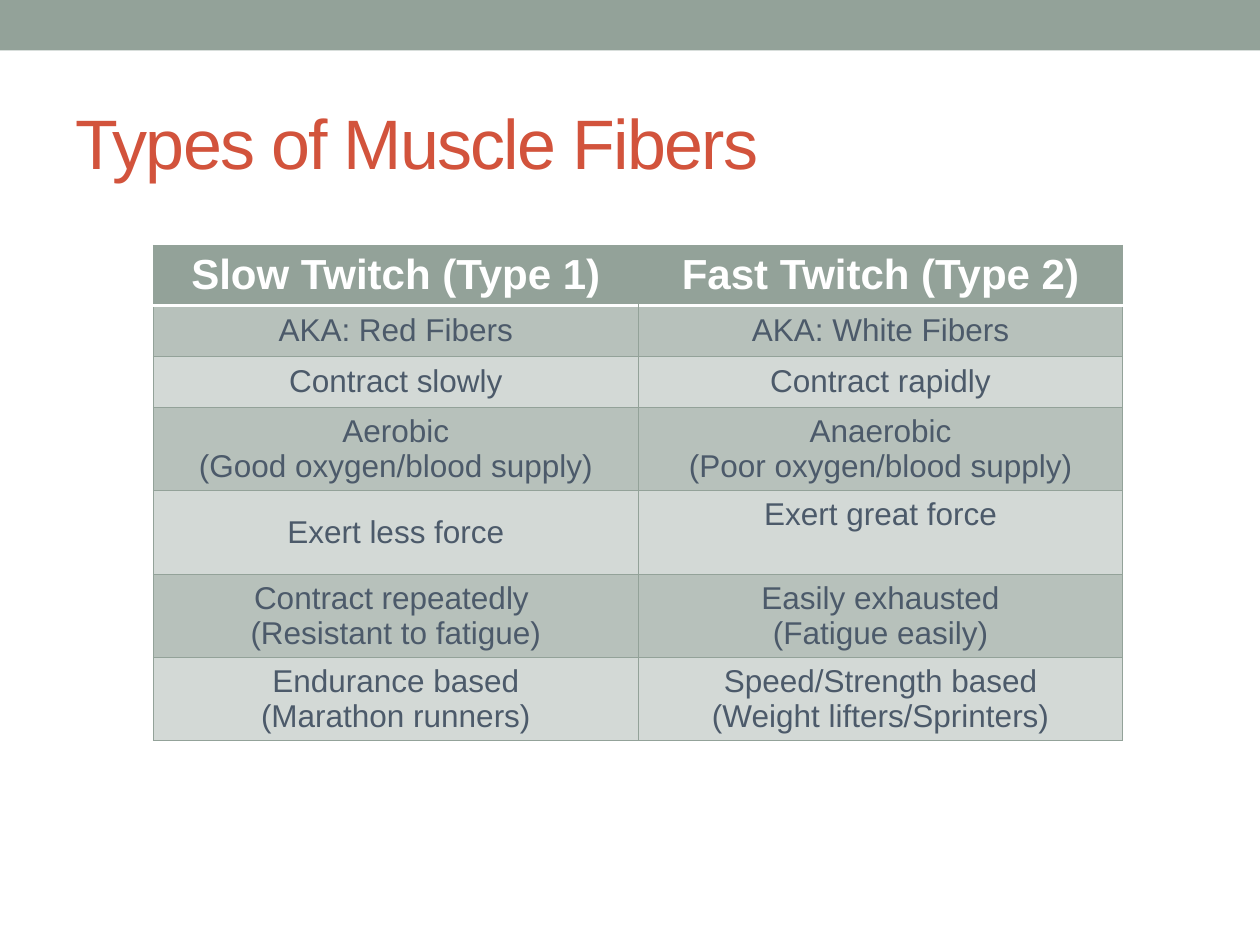
from lxml import etree
from pptx import Presentation
from pptx.dml.color import RGBColor
from pptx.enum.shapes import MSO_SHAPE
from pptx.enum.text import MSO_ANCHOR, PP_ALIGN
from pptx.oxml.ns import qn
from pptx.util import Pt

RECTANGLE = MSO_SHAPE.RECTANGLE
LEFT, CENTER = PP_ALIGN.LEFT, PP_ALIGN.CENTER
TOP, MIDDLE = MSO_ANCHOR.TOP, MSO_ANCHOR.MIDDLE

SAGE = RGBColor(0x93, 0xA2, 0x99)
BAND_DARK = RGBColor(0xB7, 0xC1, 0xBB)
BAND_LIGHT = RGBColor(0xD3, 0xD9, 0xD6)
SLATE = RGBColor(0x4C, 0x5A, 0x6A)
RUST = RGBColor(0xD2, 0x53, 0x3C)
WHITE = RGBColor(0xFF, 0xFF, 0xFF)

# "\n" starts a paragraph, "\v" breaks a line within one
FIBER_ROWS = [
    ("Slow Twitch (Type 1)", "Fast Twitch (Type 2)"),
    ("AKA: Red Fibers", "AKA: White Fibers"),
    ("Contract slowly", "Contract rapidly"),
    ("Aerobic\n(Good oxygen/blood supply)", "Anaerobic\v(Poor oxygen/blood supply)"),
    ("Exert less force", "Exert great force"),
    ("Contract repeatedly \n(Resistant to fatigue)", "Easily exhausted\n(Fatigue easily)"),
    ("Endurance based\n(Marathon runners)", "Speed/Strength based\n(Weight lifters/Sprinters)"),
]
ROW_HEIGHTS = [34.3, 29.2, 29.2] + [47.6] * 4
COLUMN_WIDTH = 277


def write(frame, text, size, color, bold=False, align=CENTER, spacing=None):
    frame.text = text
    for paragraph in frame.paragraphs:
        paragraph.alignment = align
        for run in paragraph.runs:
            run.font.name = "Arial"
            run.font.size = Pt(size)
            run.font.bold = bold
            run.font.color.rgb = color
            if spacing is not None:
                run.font._element.set("spc", str(int(spacing * 100)))


def set_borders(cell, borders):
    """Draw (side, color, width) borders in L, R, T, B order; no color hides one."""
    properties = cell._tc.get_or_add_tcPr()
    for side, color, width in borders:
        line = etree.SubElement(properties, qn(f"a:ln{side}"), w=str(Pt(width)))
        if color is None:
            etree.SubElement(line, qn("a:noFill"))
        else:
            fill = etree.SubElement(line, qn("a:solidFill"))
            etree.SubElement(fill, qn("a:srgbClr"), val=str(color))


presentation = Presentation()
presentation.slide_width, presentation.slide_height = Pt(720), Pt(540)
slide = presentation.slides.add_slide(presentation.slide_layouts[5])

top_band = slide.shapes.add_shape(RECTANGLE, 0, 0, Pt(720), Pt(28.8))
top_band.shadow.inherit = False
top_band.fill.solid()
top_band.fill.fore_color.rgb = SAGE
top_band.line.fill.background()

title = slide.shapes.title
title.left, title.top, title.width, title.height = Pt(36), Pt(42), Pt(648), Pt(78)
title.text_frame.vertical_anchor = MIDDLE
write(title.text_frame, "Types of Muscle Fibers", size=40, color=RUST, align=LEFT, spacing=-1)

fibers = slide.shapes.add_table(
    len(FIBER_ROWS), 2, Pt(87.7), Pt(140.2), Pt(2 * COLUMN_WIDTH), Pt(sum(ROW_HEIGHTS))
).table
fibers.horz_banding = False
for column in fibers.columns:
    column.width = Pt(COLUMN_WIDTH)

for r, (texts, height) in enumerate(zip(FIBER_ROWS, ROW_HEIGHTS)):
    fibers.rows[r].height = Pt(height)
    is_header = r == 0
    for c, text in enumerate(texts):
        cell = fibers.cell(r, c)
        left = None if is_header and c == 1 else SAGE
        right = None if is_header and c == 0 else SAGE
        top = (WHITE, 2.08) if r == 1 else (SAGE, 0.75)
        bottom = (WHITE, 2.08) if is_header else (SAGE, 0.75)
        set_borders(cell, [("L", left, 0.75), ("R", right, 0.75), ("T", *top), ("B", *bottom)])
        cell.fill.solid()
        cell.fill.fore_color.rgb = SAGE if is_header else BAND_DARK if r % 2 else BAND_LIGHT
        cell.vertical_anchor = TOP if is_header or text == "Exert great force" else MIDDLE
        write(
            cell.text_frame,
            text,
            size=24 if is_header else 18,
            color=WHITE if is_header else SLATE,
            bold=is_header,
        )

presentation.save("out.pptx")
